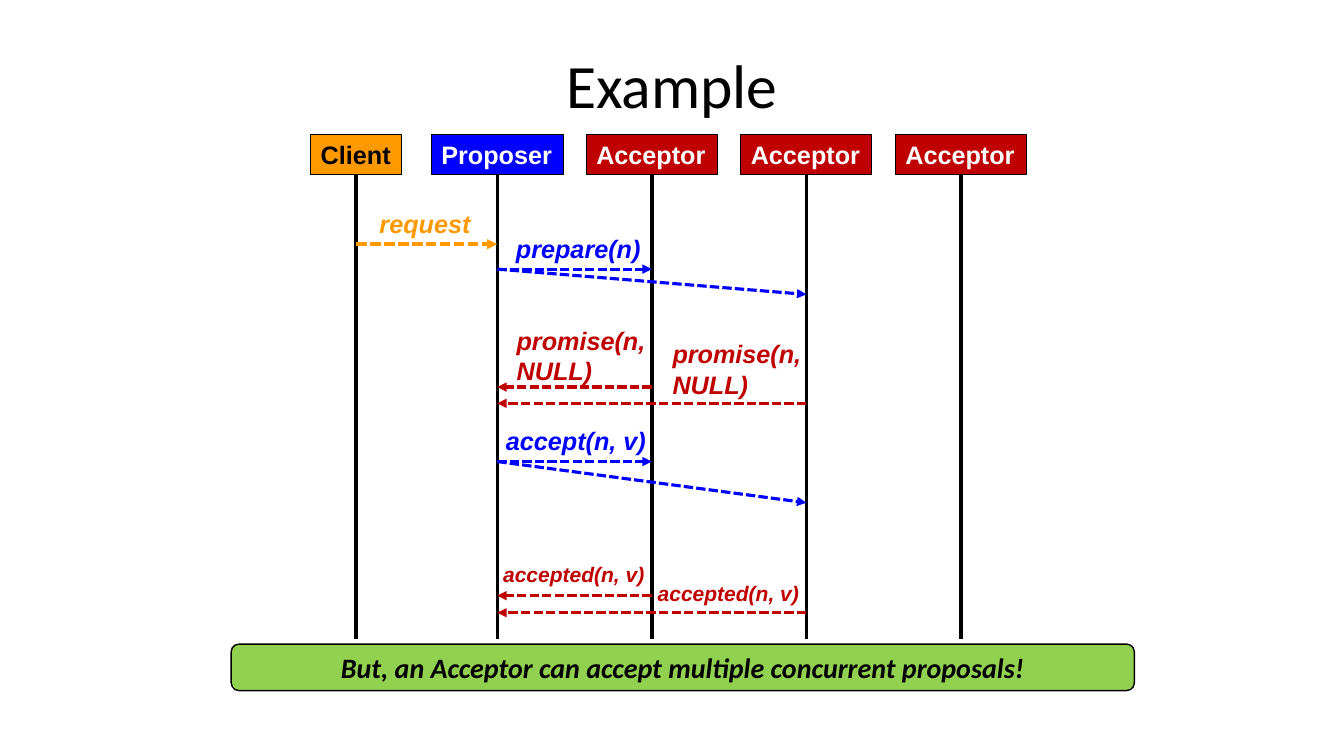
"""Build a sequence diagram slide of a consensus protocol round."""
from dataclasses import dataclass

from lxml import etree
from pptx import Presentation
from pptx.dml.color import RGBColor
from pptx.enum.dml import MSO_LINE
from pptx.enum.shapes import MSO_CONNECTOR, MSO_SHAPE
from pptx.enum.text import MSO_ANCHOR, MSO_AUTO_SIZE, PP_ALIGN
from pptx.oxml.ns import qn
from pptx.util import Inches, Pt

STRAIGHT = MSO_CONNECTOR.STRAIGHT
RECTANGLE, ROUNDED = MSO_SHAPE.RECTANGLE, MSO_SHAPE.ROUNDED_RECTANGLE
DASHED = MSO_LINE.SQUARE_DOT
CENTER, LEFT = PP_ALIGN.CENTER, PP_ALIGN.LEFT
TOP, MIDDLE = MSO_ANCHOR.TOP, MSO_ANCHOR.MIDDLE
GROW, FIXED = MSO_AUTO_SIZE.SHAPE_TO_FIT_TEXT, MSO_AUTO_SIZE.NONE
TITLE_ONLY = 5
BOTTOM_SIDE = 2

SLIDE_WIDTH, SLIDE_HEIGHT = Inches(13.33), Inches(7.5)
COLUMN, ROW = SLIDE_WIDTH / 100, SLIDE_HEIGHT / 100


@dataclass(frozen=True)
class Theme:
    """Colours, fonts and type sizes of the slide."""
    black: str = "000000"
    white: str = "FFFFFF"
    client: str = "FF9900"
    proposer: str = "0000FF"
    acceptor: str = "C00000"
    banner: str = "92D050"
    heading_font: str = "Calibri"
    label_font: str = "Arial"
    title_size: float = 44
    banner_size: float = 20
    label_size: float = 18
    small_size: float = 15
    lifeline: float = 2.5
    arrow: float = 2.25


THEME = Theme()
CLIENT, PROPOSER = 26.5, 37
FIRST, SECOND, THIRD = (PROPOSER + 11.5 * step for step in (1, 2, 3))
HEADER_TOP, HEADER_ROWS, LIFELINE_END = 17.75, 5.35, 84.5

ROLES = [
    ("Client", CLIENT, 6.75, THEME.client, THEME.black),
    ("Proposer", PROPOSER, 9.8, THEME.proposer, THEME.white),
    *[("Acceptor", lane, 9.75, THEME.acceptor, THEME.white)
      for lane in (FIRST, SECOND, THIRD)],
]
MESSAGES = [
    (CLIENT, 32.3, PROPOSER, 32.3, THEME.client, THEME.lifeline),
    (PROPOSER, 35.6, FIRST, 35.6, THEME.proposer, THEME.arrow),
    (PROPOSER, 35.6, SECOND, 38.95, THEME.proposer, THEME.arrow),
    (FIRST, 51.2, PROPOSER, 51.2, THEME.acceptor, THEME.arrow),
    (SECOND, 53.35, PROPOSER, 53.35, THEME.acceptor, THEME.arrow),
    (PROPOSER, 61.05, FIRST, 61.05, THEME.proposer, THEME.arrow),
    (PROPOSER, 61.05, SECOND, 66.5, THEME.proposer, THEME.arrow),
    (FIRST, 78.8, PROPOSER, 78.8, THEME.acceptor, THEME.arrow),
    (SECOND, 81.05, PROPOSER, 81.05, THEME.acceptor, THEME.arrow),
]
LABELS = [
    ("request", (27.5, 26.95, 8.3, 5.35), THEME.client, THEME.label_size),
    ("prepare(n)", (37.65, 30.15, 11.4, 5.35), THEME.proposer, THEME.label_size),
    ("promise(n, \vNULL)", (49.3, 44.15, 11.7, 9.45), THEME.acceptor, THEME.label_size),
    ("promise(n, \vNULL)", (37.7, 42.4, 11.7, 9.45), THEME.acceptor, THEME.label_size),
    ("accept(n, v)", (36.9, 55.6, 12, 5.35), THEME.proposer, THEME.label_size),
    ("accepted(n, v)", (36.7, 73.6, 12.15, 4.65), THEME.acceptor, THEME.small_size),
    ("accepted(n, v)", (48.2, 76.15, 12.15, 4.65), THEME.acceptor, THEME.small_size),
]


def place(columns, rows):
    """Turn a grid position into slide lengths."""
    return round(columns * COLUMN), round(rows * ROW)


def area(left, top, width, height):
    """Turn a grid area into slide lengths."""
    return *place(left, top), *place(width, height)


def apply(target, values):
    """Set each named attribute of the target."""
    for name, value in values.items():
        setattr(target, name, value)


def write(box, text, color, size, font, align=LEFT, frame=None, **style):
    """Write one formatted paragraph into a box."""
    apply(box.text_frame, frame or {})
    para = box.text_frame.paragraphs[0]
    para.text = text
    para.alignment = align
    for span in para.runs:
        apply(span.font, {"size": Pt(size), "name": font, **style})
        span.font.color.rgb = RGBColor.from_string(color)
    return para


def add_title(page, text):
    """Move and format the title placeholder."""
    title = page.shapes.title
    bounds = area(16.25, 3.35, 67.5, 16.65)
    apply(title, dict(zip(("left", "top", "width", "height"), bounds)))
    para = write(title, text, THEME.black, THEME.title_size, THEME.heading_font, CENTER,
                 {"vertical_anchor": MIDDLE, "auto_size": FIXED})
    para.line_spacing = 0.9


def add_panel(page, preset, bounds, fill, border):
    """Add a filled and outlined shape."""
    panel = page.shapes.add_shape(preset, *area(*bounds))
    panel.shadow.inherit = False
    panel.fill.solid()
    panel.fill.fore_color.rgb = RGBColor.from_string(fill)
    panel.line.color.rgb = RGBColor.from_string(THEME.black)
    panel.line.width = Pt(border)
    return panel


def add_line(page, start, end, color, weight):
    """Add a plain straight connector."""
    line = page.shapes.add_connector(STRAIGHT, *place(*start), *place(*end))
    line.line.color.rgb = RGBColor.from_string(color)
    line.line.width = Pt(weight)
    etree.SubElement(line._element.spPr, qn("a:effectLst"))
    return line


def add_role(page, name, lane, width, fill, color):
    """Add a role header with its lifeline."""
    bounds = (lane - width / 2, HEADER_TOP, width, HEADER_ROWS)
    header = add_panel(page, RECTANGLE, bounds, fill, 0.75)
    write(header, name, color, THEME.label_size, THEME.label_font, bold=True,
          frame={"word_wrap": False, "auto_size": GROW, "vertical_anchor": TOP})
    lifeline = add_line(page, (lane, HEADER_TOP + HEADER_ROWS), (lane, LIFELINE_END),
                        THEME.black, THEME.lifeline)
    lifeline.begin_connect(header, BOTTOM_SIDE)


def add_message(page, start_lane, start_row, end_lane, end_row, color, weight):
    """Add a dashed arrow between two lifelines."""
    arrow = add_line(page, (start_lane, start_row), (end_lane, end_row), color, weight)
    arrow.line.dash_style = DASHED
    outline = arrow.line._get_or_add_ln()
    etree.SubElement(outline, qn("a:tailEnd"), type="triangle")


def add_label(page, text, bounds, color, size):
    """Add the caption of a message."""
    box = page.shapes.add_textbox(*area(*bounds))
    write(box, text, color, size, THEME.label_font, bold=True, italic=True,
          frame={"word_wrap": False, "auto_size": GROW})


def add_banner(page, text):
    """Add the closing remark at the foot of the slide."""
    banner = add_panel(page, ROUNDED, (17.2, 85.2, 67.2, 6.15), THEME.banner, 1)
    write(banner, text, THEME.black, THEME.banner_size, THEME.heading_font, CENTER,
          {"word_wrap": True, "vertical_anchor": MIDDLE, "margin_left": 0, "margin_right": 0},
          bold=True, italic=True)


def main():
    """Build and save the deck."""
    deck = Presentation()
    apply(deck, {"slide_width": SLIDE_WIDTH, "slide_height": SLIDE_HEIGHT})
    page = deck.slides.add_slide(deck.slide_layouts[TITLE_ONLY])
    add_title(page, "Example")
    for add, items in ((add_role, ROLES), (add_message, MESSAGES), (add_label, LABELS)):
        for item in items:
            add(page, *item)
    add_banner(page, "But, an Acceptor can accept multiple concurrent proposals!")
    deck.save("out.pptx")


if __name__ == "__main__":
    main()
